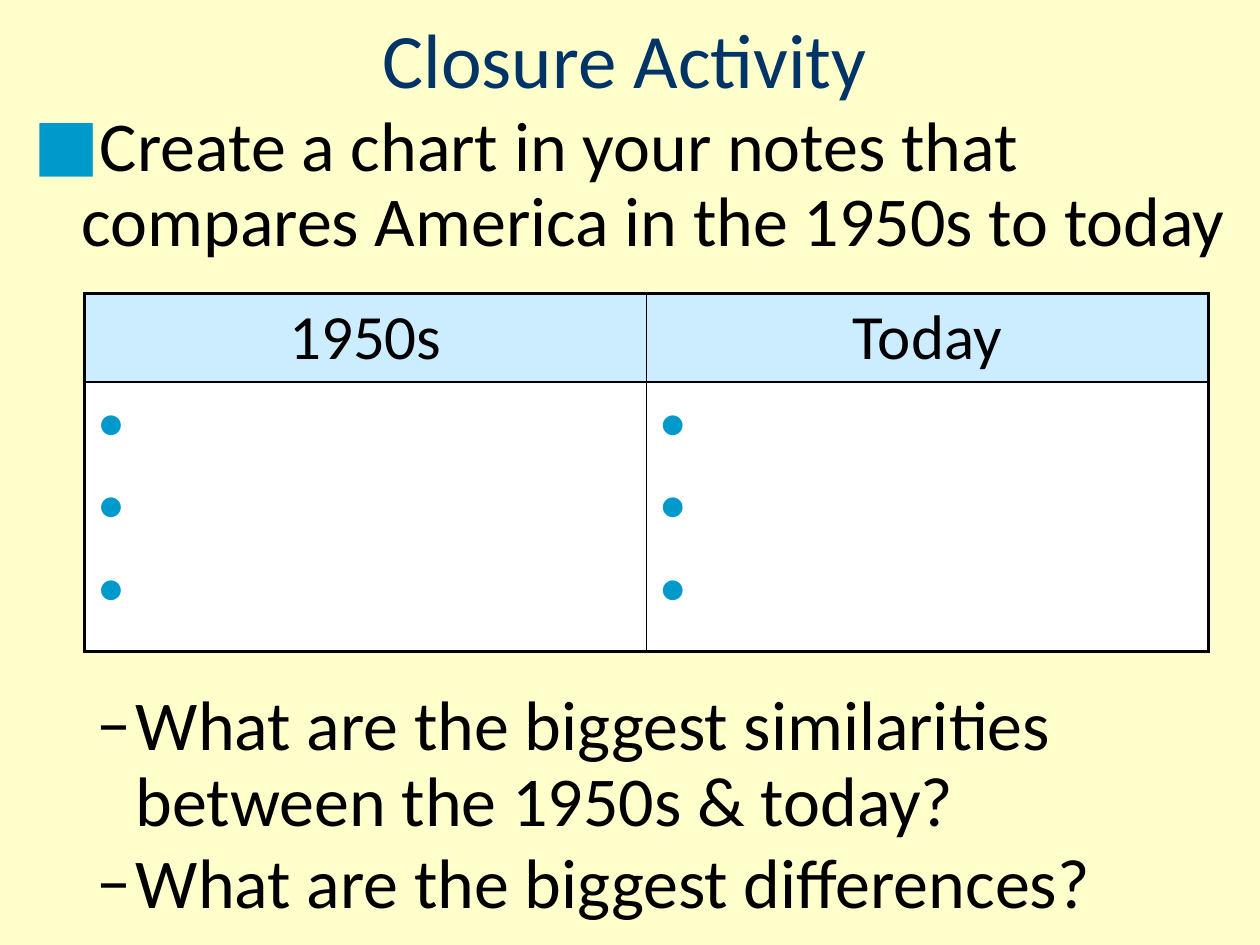
import pptx
import pptx.util
import pptx.dml.color
import pptx.enum.text
import pptx.oxml.ns
from lxml import etree

Inches, Pt = pptx.util.Inches, pptx.util.Pt
RGB = pptx.dml.color.RGBColor
ALIGN, ANCHOR = pptx.enum.text.PP_ALIGN, pptx.enum.text.MSO_ANCHOR

# Content
TITLE = "Closure Activity"
TASK = ["Create a chart in your notes that compares America in the 1950s to today"]
QUESTIONS = ["What are the biggest similarities between the 1950s & today?",
             "What are the biggest differences?"]
HEADERS = ["1950s", "Today"]
BLANK_POINTS = 3

# Style
FONT = "Calibri"
CREAM, NAVY, BLACK = RGB(255, 255, 204), RGB(0, 51, 102), RGB(0, 0, 0)
BLUE, PALE_BLUE, WHITE = RGB(0, 153, 204), RGB(204, 236, 255), RGB(255, 255, 255)
THIN, THICK = 1, 2.25

# Layout in inches
PAGE_WIDTH, PAGE_HEIGHT = 10, 7.5
BODY_LEFT, BODY_WIDTH = 0.17, 9.75
TABLE_LEFT, TABLE_TOP = 0.67, 2.33
COLUMN_WIDTH, ROW_HEIGHTS = 4.46, [0.7, 2.14]


def add_span(para, text, size, color=BLACK):
    span = para.add_run()
    span.text = text
    span.font.name, span.font.size = FONT, Pt(size)
    span.font.color.rgb = color


def add_bullet(para, char, color, margin, hang):
    props = para._p.get_or_add_pPr()
    props.set("marL", str(Inches(margin)))
    props.set("indent", str(-Inches(hang)))
    tint = etree.SubElement(props, pptx.oxml.ns.qn("a:buClr"))
    etree.SubElement(tint, pptx.oxml.ns.qn("a:srgbClr"), val=str(color))
    etree.SubElement(props, pptx.oxml.ns.qn("a:buFont"), typeface=FONT)
    etree.SubElement(props, pptx.oxml.ns.qn("a:buChar"), char=char)


def next_para(frame, index):
    return frame.add_paragraph() if index else frame.paragraphs[0]


def add_box(page, left, top, width, height):
    box = page.shapes.add_textbox(*map(Inches, (left, top, width, height)))
    box.text_frame.word_wrap = True
    return box.text_frame


def add_list(page, top, height, items, char, color, margin, hang):
    frame = add_box(page, BODY_LEFT, top, BODY_WIDTH, height)
    for index, item in enumerate(items):
        para = next_para(frame, index)
        para.line_spacing, para.space_before = 0.9, Pt(4)
        add_bullet(para, char, color, margin, hang)
        add_span(para, item, 40)


def set_borders(cell, widths):
    props = cell._tc.get_or_add_tcPr()
    for index, (side, width) in enumerate(widths.items()):
        line = etree.Element(pptx.oxml.ns.qn("a:ln" + side), w=str(Pt(width)))
        fill = etree.SubElement(line, pptx.oxml.ns.qn("a:solidFill"))
        etree.SubElement(fill, pptx.oxml.ns.qn("a:srgbClr"), val=str(BLACK))
        props.insert(index, line)


deck = pptx.Presentation()
deck.slide_width, deck.slide_height = Inches(PAGE_WIDTH), Inches(PAGE_HEIGHT)
page = deck.slides.add_slide(deck.slide_layouts[6])
page.background.fill.solid()
page.background.fill.fore_color.rgb = CREAM

# Title
title = add_box(page, 0.25, 0, 9.42, 0.92)
title.vertical_anchor = ANCHOR.MIDDLE
title.paragraphs[0].alignment = ALIGN.CENTER
add_span(title.paragraphs[0], TITLE, 44, NAVY)

# Task above the table, questions below it
add_list(page, 0.83, 1.4, TASK, "■", BLUE, 0.38, 0.38)
add_list(page, 5.43, 2.07, QUESTIONS, "–", BLACK, 0.81, 0.31)

# Comparison table
columns, rows = len(HEADERS), len(ROW_HEIGHTS)
table = page.shapes.add_table(
    rows, columns, Inches(TABLE_LEFT), Inches(TABLE_TOP),
    Inches(COLUMN_WIDTH * columns), Inches(sum(ROW_HEIGHTS))).table
for row, height in enumerate(ROW_HEIGHTS):
    table.rows[row].height = Inches(height)
    for column, header in enumerate(HEADERS):
        table.columns[column].width = Inches(COLUMN_WIDTH)
        cell = table.cell(row, column)
        cell.fill.solid()
        cell.fill.fore_color.rgb = WHITE if row else PALE_BLUE
        set_borders(cell, {
            "L": THIN if column else THICK,
            "R": THICK if column == columns - 1 else THIN,
            "T": THIN if row else THICK,
            "B": THICK if row == rows - 1 else THIN})
        if row == 0:
            para = cell.text_frame.paragraphs[0]
            para.alignment = ALIGN.CENTER
            add_span(para, header, 36)
            continue
        # Open points to fill in
        for index in range(BLANK_POINTS):
            para = next_para(cell.text_frame, index)
            para.space_before = Pt(8)
            add_bullet(para, "•", BLUE, 0.25, 0.25)
            add_span(para, " ", 32)

deck.save("out.pptx")
